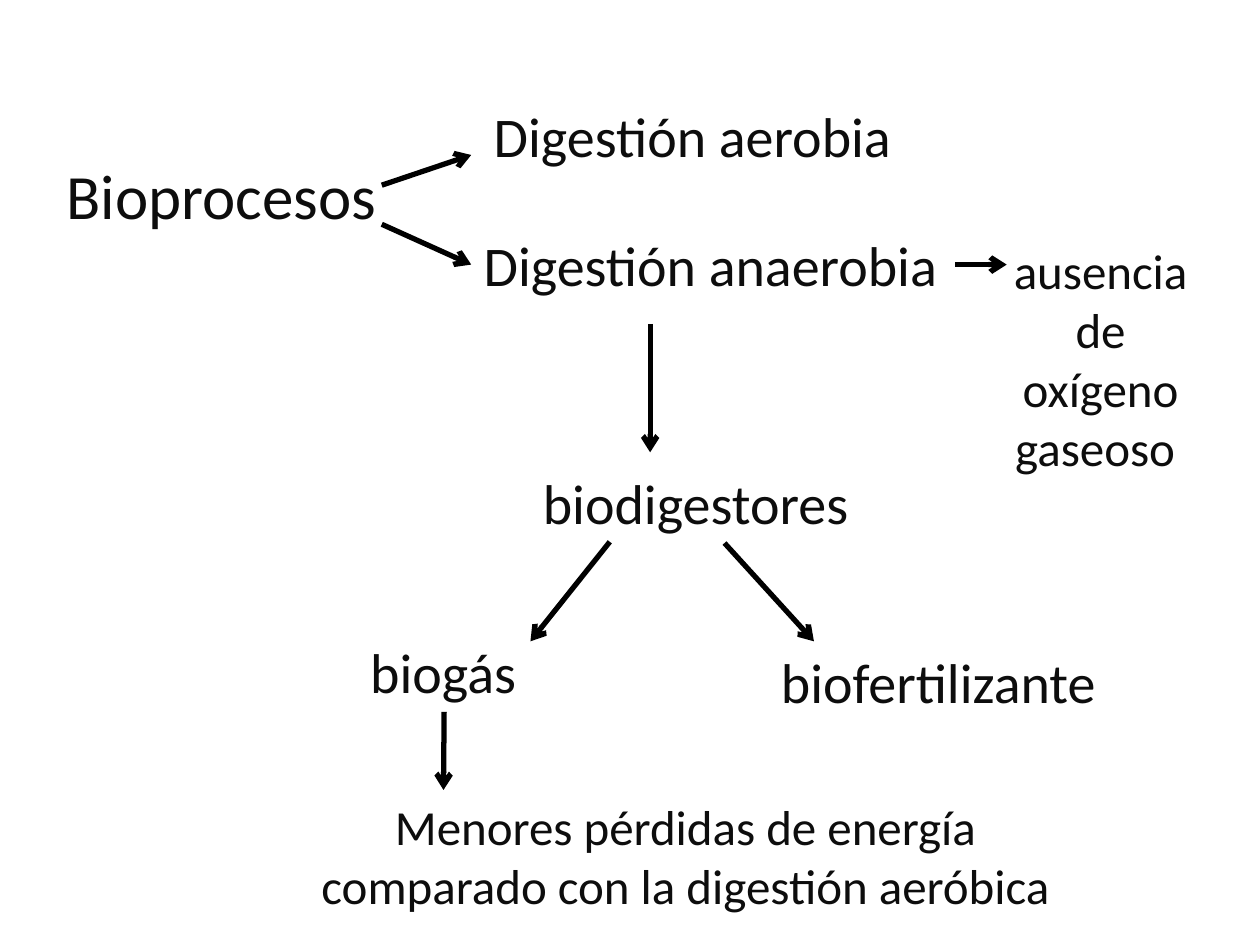
import pptx
import pptx.util
import pptx.dml.color
import pptx.enum.shapes
import pptx.enum.text
import pptx.oxml.ns
import lxml.etree

Inches = pptx.util.Inches
Pt = pptx.util.Pt
Align = pptx.enum.text.PP_ALIGN
Anchor = pptx.enum.text.MSO_ANCHOR
Size = pptx.enum.text.MSO_AUTO_SIZE

INK = pptx.dml.color.RGBColor(0x0D, 0x0D, 0x0D)
BLACK = pptx.dml.color.RGBColor(0, 0, 0)

deck = pptx.Presentation()
deck.slide_width = Inches(10)
deck.slide_height = Inches(7.5)
slide = deck.slides.add_slide(deck.slide_layouts[6])


def add_text(text, left, top, width, height, size=32, wrap=False,
             align=Align.LEFT, anchor=Anchor.TOP, fit=Size.SHAPE_TO_FIT_TEXT):
    box = slide.shapes.add_textbox(
        Inches(left), Inches(top), Inches(width), Inches(height))
    frame = box.text_frame
    frame.word_wrap = wrap
    frame.auto_size = fit
    frame.vertical_anchor = anchor
    para = frame.paragraphs[0]
    para.text = text
    para.alignment = align
    para.font.size = Pt(size)
    para.font.name = "Calibri"
    para.font.color.rgb = INK
    return box


def add_arrow(x1, y1, x2, y2):
    line = slide.shapes.add_connector(
        pptx.enum.shapes.MSO_CONNECTOR.STRAIGHT,
        Inches(x1), Inches(y1), Inches(x2), Inches(y2))
    line.line.color.rgb = BLACK
    line.line.width = Pt(3)
    qn = pptx.oxml.ns.qn
    lxml.etree.SubElement(line.line._get_or_add_ln(), qn("a:tailEnd"), type="arrow")
    lxml.etree.SubElement(line._element.spPr, qn("a:effectLst"))
    return line


# Terms of the map
add_text("Bioprocesos", 0.43, 0.92, 2.76, 1.25, size=36, wrap=True,
         anchor=Anchor.MIDDLE, fit=Size.NONE)
add_text("Digestión aerobia", 3.82, 0.76, 3.39, 0.64)
anaerobic = add_text("Digestión anaerobia", 3.74, 1.78, 3.84, 0.64)
add_text("ausencia de oxígeno gaseoso ", 7.83, 1.86, 1.81, 2.29,
         size=28, wrap=True, align=Align.CENTER)
add_text("biodigestores", 4.21, 3.67, 2.65, 0.64)
biogas = add_text("biogás", 2.84, 5.01, 1.37, 0.64)
add_text("biofertilizante", 6.1, 5.09, 2.73, 0.64)
add_text("Menores pérdidas de energía comparado con la digestión aeróbica",
         2.17, 6.27, 6.54, 1.04, size=28, wrap=True, align=Align.CENTER)

# Free arrows between terms
for ends in [
    (3.03, 1.47, 3.74, 1.23),
    (3.03, 1.78, 3.74, 2.1),
    (5.16, 2.57, 5.16, 3.59),
    (4.84, 4.3, 4.21, 5.09),
    (5.75, 4.31, 6.46, 5.09),
]:
    add_arrow(*ends)

# Arrows that leave the middle of a side
add_arrow(7.58, 2.1, 7.99, 2.1).begin_connect(anaerobic, 3)
add_arrow(3.52, 5.65, 3.52, 6.27).begin_connect(biogas, 2)

deck.save("out.pptx")
